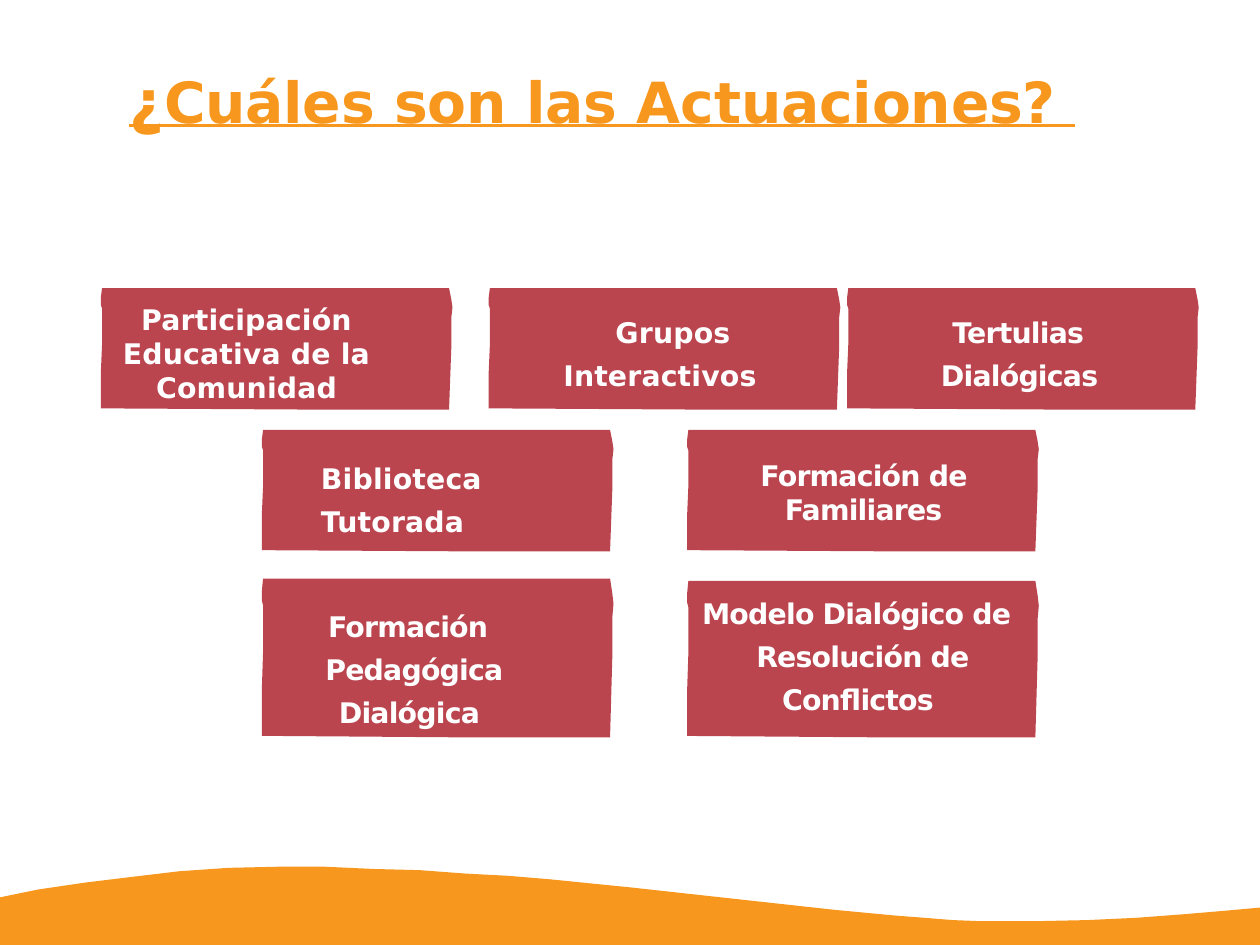
from pptx import Presentation
from pptx.dml.color import RGBColor
from pptx.enum.text import MSO_ANCHOR, PP_ALIGN
from pptx.util import Inches, Pt

LEFT, CENTER = PP_ALIGN.LEFT, PP_ALIGN.CENTER
TOP = MSO_ANCHOR.TOP

FONT = "DejaVu Sans"
ORANGE, RED, WHITE = "F8971D", "BB454F", "FFFFFF"
CARD_TEXT_WIDTH, CARD_TEXT_HEIGHT = 2.56, 0.63
CARD_HEIGHT = 1.07

CARD_OUTLINE = [
    (0.01, 0), (0, 0.08), (0, 0.15), (0.01, 0.18), (0.01, 0.5), (0, 0.73),
    (0, 1.06), (1.77, 1.07), (3.07, 1.07), (3.09, 0.52), (3.09, 0.26),
    (3.1, 0.17), (3.09, 0.1), (3.07, 0),
]
WAVE_OUTLINE = [
    (0, 8.33), (0, 7.91), (0.34, 7.84), (0.75, 7.78), (1.16, 7.73),
    (1.58, 7.68), (2.01, 7.65), (2.44, 7.64), (2.87, 7.64), (3.3, 7.66),
    (3.7, 7.67), (4.1, 7.7), (4.48, 7.72), (4.84, 7.75), (5.54, 7.82),
    (7.36, 8.02), (7.89, 8.07), (8.15, 8.09), (8.4, 8.11), (8.65, 8.12),
    (8.89, 8.12), (9.13, 8.12), (9.59, 8.11), (10.02, 8.09), (10.42, 8.06),
    (10.78, 8.03), (11.11, 8), (11.11, 8.33),
]

# Each card: left, top, height, text, text left, text top, text options
CARDS = [
    (0.89, 2.54, CARD_HEIGHT, "Participación Educativa de la Comunidad", 0.89, 2.66,
     {"line_spacing": 1.0}),
    (4.31, 2.54, CARD_HEIGHT, "Grupos Interactivos ", 4.58, 2.7,
     {"first_indent": 0.14}),
    (7.47, 2.54, CARD_HEIGHT, "Tertulias Dialógicas ", 7.69, 2.7,
     {"margin": 0.12, "first_indent": -0.11, "tracking": -0.5}),
    (2.31, 3.79, CARD_HEIGHT, "Biblioteca Tutorada", 2.64, 3.99,
     {"margin": 0.19, "alignment": LEFT}),
    (6.06, 3.79, CARD_HEIGHT, "Formación de Familiares", 6.33, 4.04,
     {"line_spacing": 1.0, "tracking": -0.5}),
    (2.31, 5.1, 1.4, "Formación Pedagógica Dialógica ", 2.31, 5.29,
     {"margin": 0.12, "first_indent": -0.11, "tracking": -0.5}),
    (6.06, 5.12, 1.38, "Modelo Dialógico de Resolución de Conflictos ", 6.11, 5.18,
     {"margin": 0.12, "first_indent": -0.11, "tracking": -0.5,
      "width": 2.87, "height": 1.32}),
]


def color(value):
    """Turn a hex string into a colour."""
    return RGBColor.from_string(value)


def add_outline(slide, points, fill):
    """Draw a closed, filled outline through points given in inches."""
    points = [(Inches(x), Inches(y)) for x, y in points]
    builder = slide.shapes.build_freeform(*points[0])
    builder.add_line_segments(points[1:], close=True)
    shape = builder.convert_to_shape()
    shape.shadow.inherit = False
    shape.fill.solid()
    shape.fill.fore_color.rgb = color(fill)
    shape.line.fill.background()


def add_paragraph_box(slide, left, top, width, height, alignment, line_spacing,
                      margin=0.01, first_indent=0):
    """Add a text box without insets and return its paragraph."""
    box = slide.shapes.add_textbox(Inches(left), Inches(top), Inches(width), Inches(height))
    frame = box.text_frame
    frame.word_wrap = True
    frame.vertical_anchor = TOP
    frame.margin_left = frame.margin_right = frame.margin_top = frame.margin_bottom = 0
    paragraph = frame.paragraphs[0]
    paragraph.alignment = alignment
    paragraph.line_spacing = line_spacing
    properties = paragraph._p.get_or_add_pPr()
    properties.set("marL", str(Inches(margin)))
    properties.set("indent", str(Inches(first_indent)))
    return paragraph


def add_run(paragraph, text, size, text_color, tracking, underline=False):
    """Add a bold run with letter spacing in points."""
    run = paragraph.add_run()
    run.text = text
    font = run.font
    font.name = FONT
    font.size = Pt(size)
    font.bold = True
    font.underline = underline
    font.color.rgb = color(text_color)
    run._r.get_or_add_rPr().set("spc", str(round(tracking * 100)))


def add_title(slide):
    """Add the underlined title."""
    paragraph = add_paragraph_box(slide, 1.13, 0.67, 9.19, 1.13, LEFT, Pt(37.5))
    for text, size in (("¿", 38), ("Cuáles son las Actuaciones? ", 36)):
        add_run(paragraph, text, size, ORANGE, -0.1, underline=True)


def add_card(slide, left, top, height, text, text_left, text_top, options):
    """Add a red card stretched to its height, with its label."""
    stretch = height / CARD_HEIGHT
    add_outline(slide, [(left + x, top + y * stretch) for x, y in CARD_OUTLINE], RED)
    paragraph = add_paragraph_box(
        slide, text_left, text_top,
        options.get("width", CARD_TEXT_WIDTH), options.get("height", CARD_TEXT_HEIGHT),
        options.get("alignment", CENTER), options.get("line_spacing", 1.26),
        options.get("margin", 0.01), options.get("first_indent", 0))
    add_run(paragraph, text, 18, WHITE, options.get("tracking", 0.1))


def main():
    """Build the slide and save it."""
    presentation = Presentation()
    presentation.slide_width = Inches(11.11)
    presentation.slide_height = Inches(8.33)
    slide = presentation.slides.add_slide(presentation.slide_layouts[6])
    add_outline(slide, WAVE_OUTLINE, ORANGE)
    add_title(slide)
    for card in CARDS:
        add_card(slide, *card)
    presentation.save("out.pptx")


if __name__ == "__main__":
    main()
